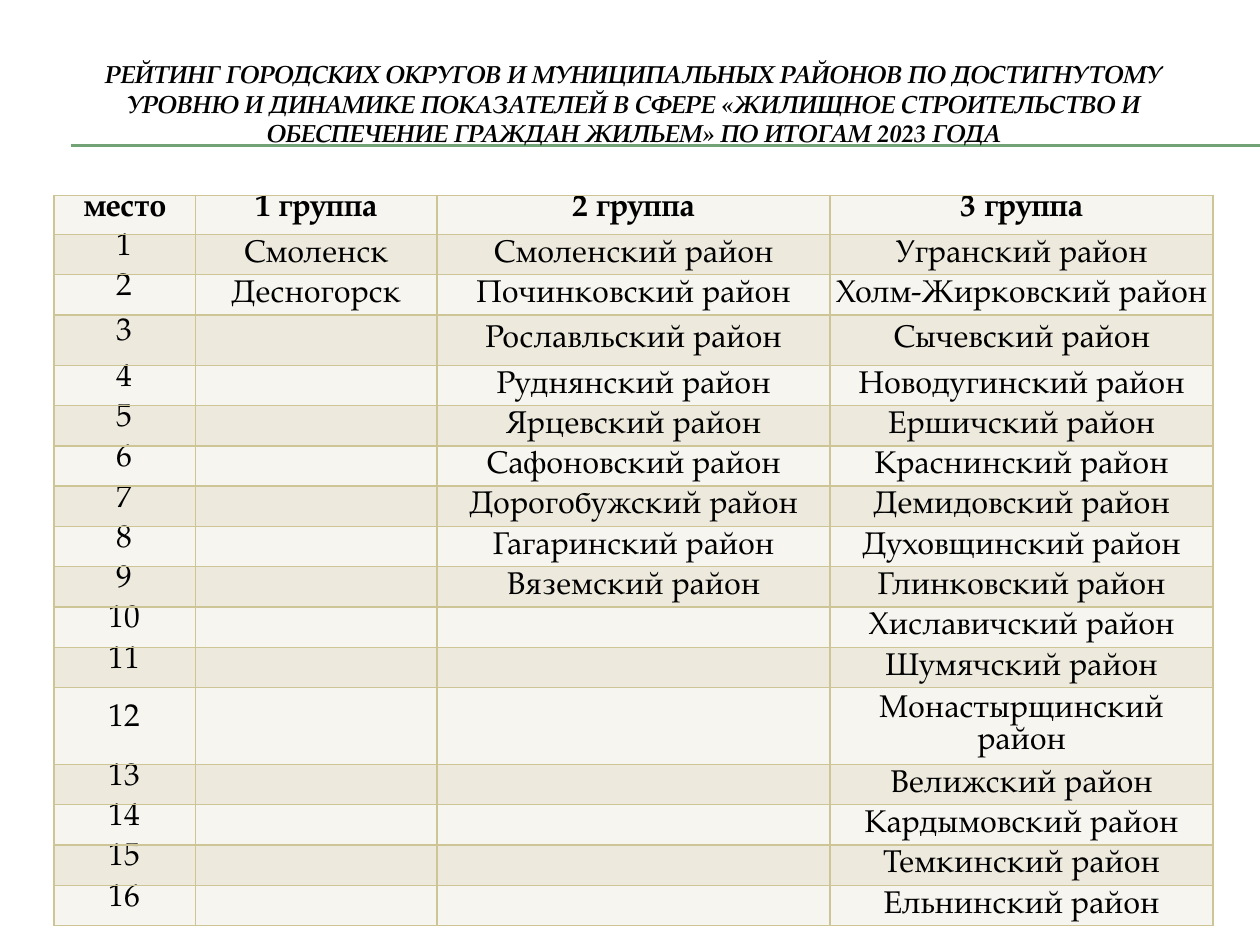
from dataclasses import dataclass
from itertools import zip_longest

from lxml import etree
from pptx import Presentation
from pptx import util as u
from pptx.dml.color import RGBColor
from pptx.enum import shapes, text
from pptx.oxml.ns import qn


@dataclass(frozen=True)
class Theme:
    font: str = "TeX Gyre Pagella"
    ink: str = "000000"
    rule: str = "72A376"
    border: str = "CEC597"
    light_band: str = "F6F5EF"
    dark_band: str = "EDEADD"
    title_size: int = 14
    table_size: int = 18


THEME = Theme()

TITLE = (
    "РЕЙТИНГ ГОРОДСКИХ ОКРУГОВ И МУНИЦИПАЛЬНЫХ РАЙОНОВ ПО ДОСТИГНУТОМУ "
    "УРОВНЮ И ДИНАМИКЕ ПОКАЗАТЕЛЕЙ В СФЕРЕ «ЖИЛИЩНОЕ СТРОИТЕЛЬСТВО И "
    "ОБЕСПЕЧЕНИЕ ГРАЖДАН ЖИЛЬЕМ» ПО ИТОГАМ 2023 ГОДА"
)
HEADER = ["место", "1 группа", "2 группа", "3 группа"]
CITIES = ["Смоленск", "Десногорск"]
SECOND_GROUP = [
    "Смоленский", "Починковский", "Рославльский", "Руднянский", "Ярцевский",
    "Сафоновский", "Дорогобужский", "Гагаринский", "Вяземский",
]
THIRD_GROUP = [
    "Угранский", "Холм-Жирковский", "Сычевский", "Новодугинский", "Ершичский",
    "Краснинский", "Демидовский", "Духовщинский", "Глинковский", "Хиславичский",
    "Шумячский", "Монастырщинский", "Велижский", "Кардымовский", "Темкинский",
    "Ельнинский",
]

COLUMN_WIDTHS = [1.12, 1.92, 3.12, 3.04]
HEADER_HEIGHT, ROW_HEIGHT, TALL_ROW_HEIGHT = 0.31, 0.32, 0.4
TALL_ROW = 3


def write_text(frame, content, *, size, bold=False, italic=False, line_spacing=None):
    paragraph = frame.paragraphs[0]
    paragraph.alignment = text.PP_ALIGN.CENTER
    if line_spacing:
        paragraph.line_spacing = u.Pt(line_spacing)
    run = paragraph.add_run()
    run.text = content
    run.font.name = THEME.font
    run.font.size = u.Pt(size)
    run.font.bold = bold
    run.font.italic = italic
    run.font.color.rgb = RGBColor.from_string(THEME.ink)


def add_title(slide, left, top, width, height):
    box = slide.shapes.add_textbox(*map(u.Inches, (left, top, width, height)))
    frame = box.text_frame
    frame.word_wrap = True
    frame.vertical_anchor = text.MSO_ANCHOR.MIDDLE
    write_text(frame, TITLE, size=THEME.title_size, bold=True, italic=True)


def add_double_rule(slide, left, top, width, gap):
    for y in (top, top + gap):
        rule = slide.shapes.add_connector(
            shapes.MSO_CONNECTOR.STRAIGHT,
            *map(u.Inches, (left, y, left + width, y)),
        )
        rule.line.color.rgb = RGBColor.from_string(THEME.rule)
        rule.line.width = u.Pt(0.75)
        etree.SubElement(rule.element.spPr, qn("a:effectLst"))


def add_borders(cell):
    properties = cell._tc.get_or_add_tcPr()
    for side in ("a:lnL", "a:lnR", "a:lnT", "a:lnB"):
        line = etree.SubElement(properties, qn(side), w=str(u.Pt(1)))
        fill = etree.SubElement(line, qn("a:solidFill"))
        etree.SubElement(fill, qn("a:srgbClr"), val=THEME.border)


def format_cell(cell, content, band, *, is_header, is_place):
    """Header and place cells have tight lines; the others have thin margins."""
    add_borders(cell)
    cell.fill.solid()
    cell.fill.fore_color.rgb = RGBColor.from_string(band)
    cell.vertical_anchor = text.MSO_ANCHOR.MIDDLE
    tight = is_header or is_place
    if not tight:
        cell.margin_left = cell.margin_right = cell.margin_top = u.Inches(0.01)
        cell.margin_bottom = 0
    if content:
        write_text(cell.text_frame, content, size=THEME.table_size,
                   bold=is_header, line_spacing=11 if tight else None)


def ranking_rows():
    districts = [[f"{name} район" for name in group]
                 for group in (SECOND_GROUP, THIRD_GROUP)]
    places = [str(place) for place in range(1, len(THIRD_GROUP) + 1)]
    return [HEADER, *zip_longest(places, CITIES, *districts, fillvalue="")]


def add_ranking_table(slide, left, top, width, height):
    rows = ranking_rows()
    table = slide.shapes.add_table(
        len(rows), len(HEADER), *map(u.Inches, (left, top, width, height))
    ).table
    table.horz_banding = False
    for column, column_width in zip(table.columns, COLUMN_WIDTHS):
        column.width = u.Inches(column_width)
    special_heights = {0: HEADER_HEIGHT, TALL_ROW: TALL_ROW_HEIGHT}
    for row_index, row in enumerate(rows):
        table.rows[row_index].height = u.Inches(
            special_heights.get(row_index, ROW_HEIGHT))
        band = THEME.dark_band if row_index % 2 else THEME.light_band
        for column_index, content in enumerate(row):
            format_cell(table.cell(row_index, column_index), content, band,
                        is_header=row_index == 0, is_place=column_index == 0)


def main():
    presentation = Presentation()
    presentation.slide_width = u.Inches(10)
    presentation.slide_height = u.Inches(7.5)
    slide = presentation.slides.add_slide(presentation.slide_layouts[6])
    add_double_rule(slide, 0.56, 1.15, 9.44, gap=0.01)
    add_title(slide, 0.28, 0.36, 9.5, 0.92)
    add_ranking_table(slide, 0.43, 1.55, 9.2, 5.46)
    presentation.save("out.pptx")


if __name__ == "__main__":
    main()
